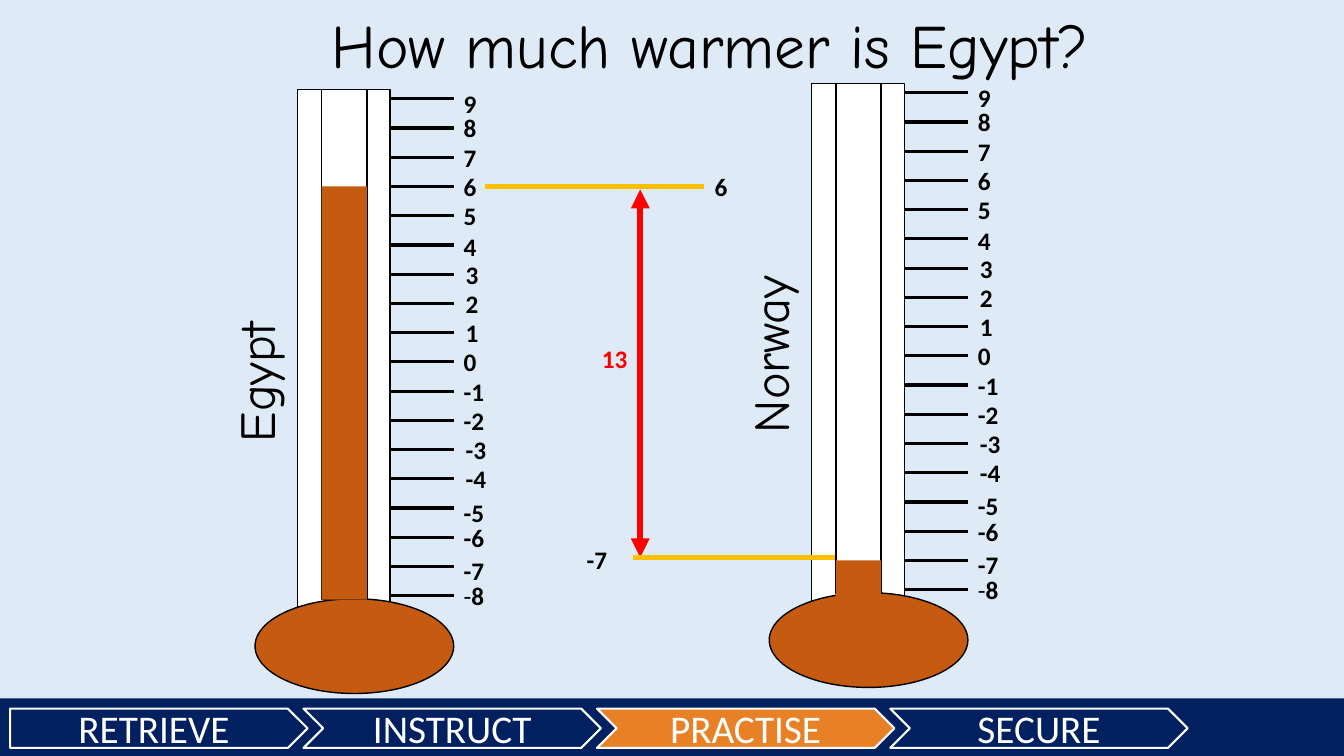
from lxml import etree
from pptx import Presentation
from pptx.dml.color import RGBColor
from pptx.enum.shapes import MSO_CONNECTOR as Line, MSO_SHAPE as Shape
from pptx.enum.text import MSO_ANCHOR as Anchor, MSO_AUTO_SIZE as Fit, PP_ALIGN as Align
from pptx.oxml.ns import qn
from pptx.util import Inches, Pt

WIDTH, HEIGHT = 13.33, 7.5
TITLE = "How much warmer is Egypt?"
STAGES = [("RETRIEVE", "002060"), ("INSTRUCT", "002060"), ("PRACTISE", "E88126"), ("SECURE", "002060")]
SCALE = range(9, -9, -1)
LABEL_SHIFTS = {9: (0, 0.05), 4: (0, 0.02), 3: (0.02, 0), 2: (0.02, 0), 1: (0.02, 0),
                -3: (0.02, 0), -4: (0.02, 0), -5: (0, 0.04), -7: (0, 0.04)}
THERMOMETERS = [
    {"place": "Egypt", "left": 2.53, "top": 0.89, "name_middle": 3.32, "mercury": (1.85, 4.1)},
    {"place": "Norway", "left": 7.63, "top": 0.83, "name_middle": 3.23, "mercury": (5.56, 0.37)},
]
WARM_LEVEL, COLD_LEVEL, ARROW_X = 1.85, 5.53, 6.35
GUIDES = [(4.81, 6.98, WARM_LEVEL), (6.28, 8.28, COLD_LEVEL)]
READINGS = [("6", 6.99, 1.65, "000000"), ("-7", 5.72, 5.35, "000000"), ("13", 5.87, 3.36, "FF0000")]
DEGREE = 0.29
BULB_COLOR = "C55A11"


def color(code):
    return RGBColor.from_string(code)


def style_text(box, size, code="000000", font="Calibri", bold=False):
    for para in box.text_frame.paragraphs:
        for span in para.runs:
            span.font.size = Pt(size)
            span.font.name = font
            span.font.bold = bold
            span.font.color.rgb = color(code)


def add_block(shapes, kind, left, top, width, height, fill, line=None, weight=1):
    block = shapes.add_shape(kind, Inches(left), Inches(top), Inches(width), Inches(height))
    block.shadow.inherit = False
    block.fill.solid()
    block.fill.fore_color.rgb = color(fill)
    if line:
        block.line.color.rgb = color(line)
        block.line.width = Pt(weight)
    else:
        block.line.fill.background()
    return block


def add_line(shapes, x1, y1, x2, y2, code, weight):
    line = shapes.add_connector(Line.STRAIGHT, Inches(x1), Inches(y1), Inches(x2), Inches(y2))
    line.line.color.rgb = color(code)
    line.line.width = Pt(weight)
    etree.SubElement(line._element.spPr, qn("a:effectLst"))
    return line


def add_label(shapes, text, left, top, width=0.91, height=0.4):
    box = shapes.add_textbox(Inches(left), Inches(top), Inches(width), Inches(height))
    box.text_frame.word_wrap = True
    box.text_frame.text = text
    return box


def add_ribbon(shapes):
    add_block(shapes, Shape.RECTANGLE, 0, 6.93, WIDTH, HEIGHT - 6.93, "002060")
    for index, (stage, fill) in enumerate(STAGES):
        kind = Shape.CHEVRON if index else Shape.PENTAGON
        step = add_block(shapes, kind, 0.1 + 2.91 * index, 7.03, 2.95, 0.39, fill, "FFFFFF", 1.5)
        step.text_frame.text = stage
        step.text_frame.vertical_anchor = Anchor.MIDDLE
        step.text_frame.paragraphs[0].alignment = Align.CENTER
        style_text(step, 28, "FFFFFF")


def add_thermometer(shapes, left, top):
    parts = shapes.add_group_shape().shapes
    add_block(parts, Shape.RECTANGLE, left + 0.42, top, 0.92, 5.48, "FFFFFF", "000000")
    add_block(parts, Shape.OVAL, left, top + 5.05, 1.97, 0.94, BULB_COLOR, "000000")
    add_block(parts, Shape.RECTANGLE, left + 0.66, top, 0.45, 5.06, "FFFFFF", "000000")
    for row, degree in enumerate(SCALE):
        level = top + 0.09 + DEGREE * row
        add_line(parts, left + 1.34, level, left + 1.97, level, "000000", 2.25)
        right, down = LABEL_SHIFTS.get(degree, (0, 0))
        label = add_label(parts, str(degree), left + 1.97 + right, level - 0.2 + down)
        if degree == SCALE[-1]:
            para = label.text_frame.paragraphs[0]
            para.text = "-"
            para.add_run().text = str(-degree)
        style_text(label, 18, bold=True)
        if degree == SCALE[-1]:
            para.runs[0].font.bold = False


def add_place_name(shapes, place, left, middle):
    name = add_label(shapes, place, left, middle - 0.355, 2.33, 0.71)
    name.rotation = 270
    style_text(name, 36, font="Comic Neue")


def add_difference(shapes):
    arrow = add_line(shapes, ARROW_X, COLD_LEVEL, ARROW_X, WARM_LEVEL + 0.03, "FF0000", 4.5)
    outline = arrow.line._get_or_add_ln()
    for end in ("a:headEnd", "a:tailEnd"):
        etree.SubElement(outline, qn(end)).set("type", "triangle")
    for start, stop, level in GUIDES:
        add_line(shapes, start, level, stop, level, "FFC000", 3)
    for text, left, top, code in READINGS:
        style_text(add_label(shapes, text, left, top), 18, code, bold=True)


def set_title(title):
    title.left, title.top, title.width, title.height = (Inches(n) for n in (3.19, 0.1, 9, 1.25))
    frame = title.text_frame
    frame.text = TITLE
    frame.word_wrap = True
    frame.auto_size = Fit.NONE
    frame.vertical_anchor = Anchor.TOP
    frame.paragraphs[0].alignment = Align.LEFT
    frame.paragraphs[0].line_spacing = 0.9
    style_text(title, 44, font="Comic Neue")


def main():
    deck = Presentation()
    deck.slide_width, deck.slide_height = Inches(WIDTH), Inches(HEIGHT)
    page = deck.slides.add_slide(deck.slide_layouts[5])
    page.background.fill.solid()
    page.background.fill.fore_color.rgb = color("DEEBF7")
    set_title(page.shapes.title)
    add_ribbon(page.shapes)
    for item in THERMOMETERS:
        left = item["left"]
        add_thermometer(page.shapes, left, item["top"])
        add_place_name(page.shapes, item["place"], left - 1.16, item["name_middle"])
        start, length = item["mercury"]
        add_block(page.shapes, Shape.RECTANGLE, left + 0.66, start, 0.45, length, BULB_COLOR)
    add_difference(page.shapes)
    deck.save("out.pptx")


if __name__ == "__main__":
    main()
